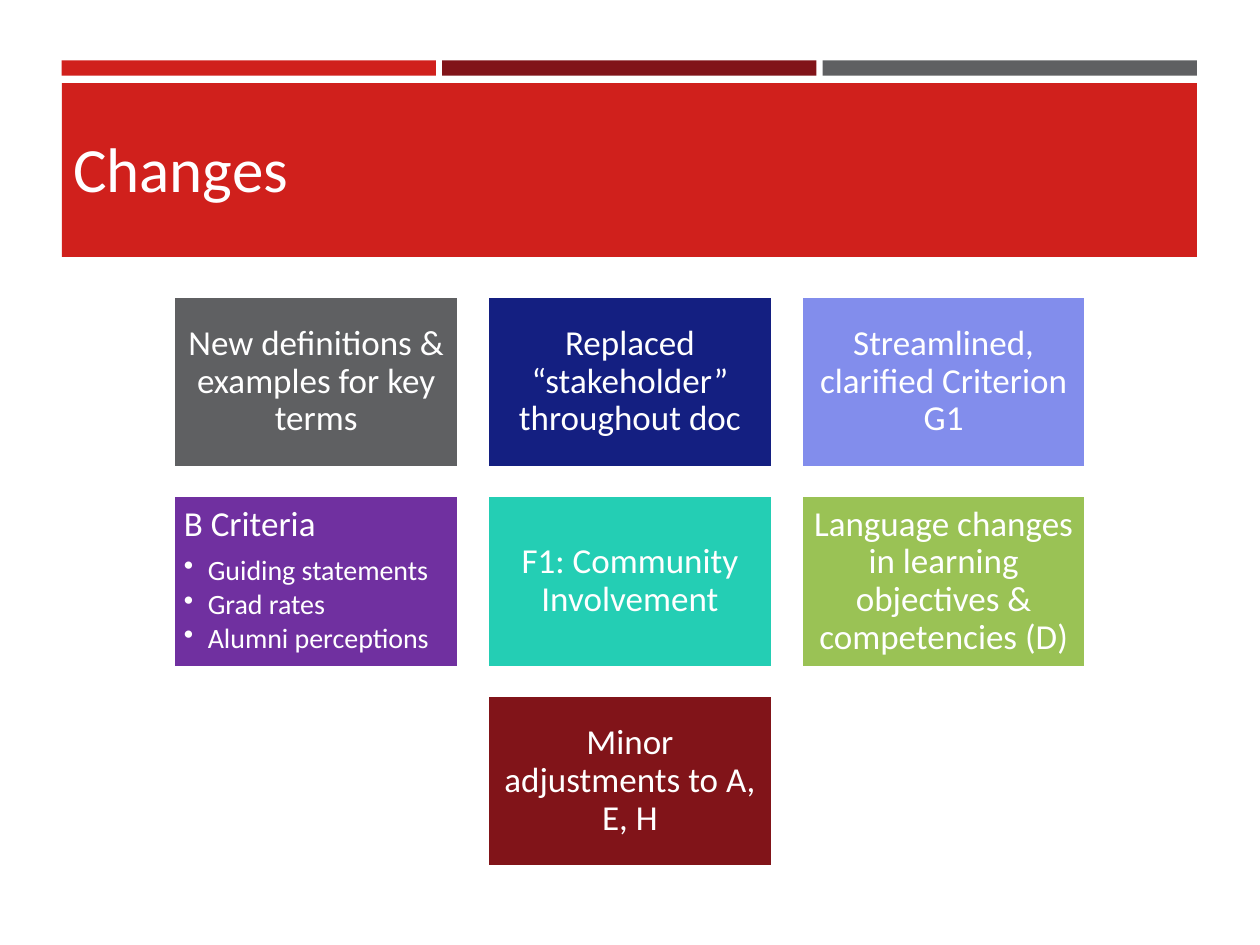
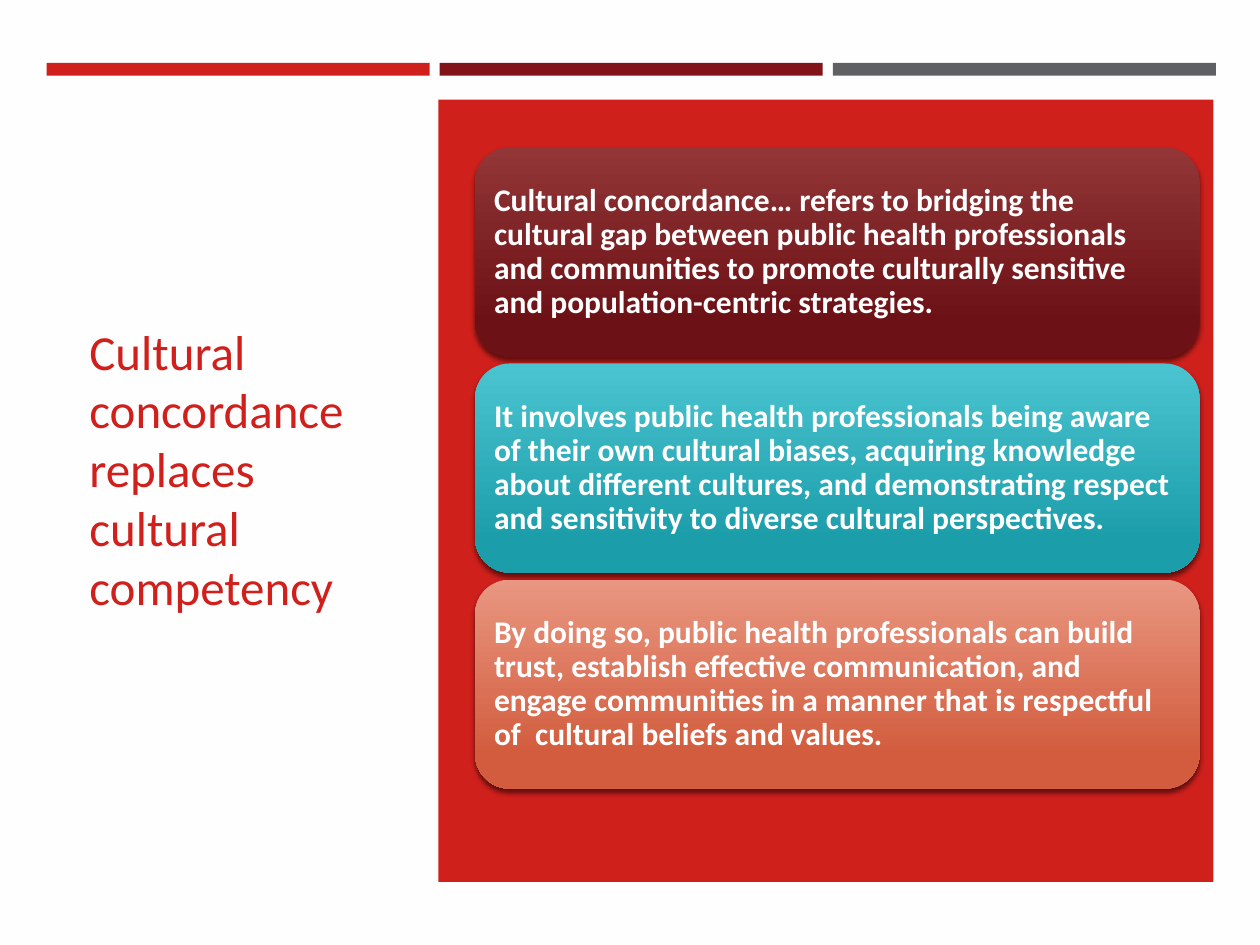
from lxml.etree import SubElement
from pptx import Presentation
from pptx.dml.color import RGBColor
from pptx.enum.shapes import MSO_SHAPE
from pptx.enum.text import MSO_ANCHOR, MSO_AUTO_SIZE, PP_ALIGN
from pptx.oxml import parse_xml
from pptx.oxml.ns import nsdecls, qn
from pptx.util import Inches, Pt

RED = RGBColor(0xD0, 0x20, 0x1C)
WINE = RGBColor(0x81, 0x14, 0x19)
GRAY = RGBColor(0x5F, 0x60, 0x62)
NAVY = RGBColor(0x14, 0x1F, 0x81)
LILAC = RGBColor(0x82, 0x8D, 0xEC)
PURPLE = RGBColor(0x70, 0x30, 0xA0)
TEAL = RGBColor(0x24, 0xCE, 0xB4)
GREEN = RGBColor(0x9A, 0xC2, 0x55)
WHITE = RGBColor(0xFF, 0xFF, 0xFF)
PAPER = RGBColor(0xFF, 0xFE, 0xFF)
WINES = RGBColor(0x92, 0x36, 0x38), RGBColor(0x6C, 0x11, 0x15)
AQUAS = RGBColor(0x4B, 0xC4, 0xD1), RGBColor(0x1C, 0x9E, 0xAA)
CORALS = RGBColor(0xE9, 0x97, 0x82), RGBColor(0xD2, 0x5C, 0x3D)
FONT = "Calibri"
SHADOW = (
    f'<a:effectLst {nsdecls("a")}><a:outerShdw blurRad="38100" dist="25400" '
    'dir="5400000" rotWithShape="0"><a:srgbClr val="000000">'
    '<a:alpha val="55000"/></a:srgbClr></a:outerShdw></a:effectLst>'
)


def draw(slide, area, fill=None, kind=MSO_SHAPE.RECTANGLE):
    shape = slide.shapes.add_shape(kind, *map(Inches, area))
    shape.shadow.inherit = False
    shape.line.fill.background()
    if fill is not None:
        shape.fill.solid()
        shape.fill.fore_color.rgb = fill
    return shape


def write(shape, text, size=20, color=WHITE, bold=False, align=PP_ALIGN.LEFT,
          anchor=MSO_ANCHOR.MIDDLE, inset=0.08, space=0.9, after=0, bullet=False):
    frame = shape.text_frame
    frame.word_wrap = True
    frame.auto_size = MSO_AUTO_SIZE.NONE
    frame.vertical_anchor = anchor
    frame.margin_left = frame.margin_right = Inches(inset)
    frame.margin_top = frame.margin_bottom = Inches(inset)
    para = frame.add_paragraph() if frame.text else frame.paragraphs[0]
    para.alignment = align
    para.line_spacing = space
    para.space_before = Pt(0)
    para.space_after = Pt(after)
    if bullet:
        para.level = 1
        props = para._p.get_or_add_pPr()
        props.set("marL", str(Inches(0.19)))
        props.set("indent", str(-Inches(0.19)))
        SubElement(props, qn("a:buChar")).set("char", "•")
    run = para.add_run()
    run.text = text
    run.font.name = FONT
    run.font.size = Pt(size)
    run.font.bold = bold
    run.font.color.rgb = color


deck = Presentation()
deck.slide_width, deck.slide_height = Inches(10), Inches(7.5)

heads = [
    ("Changes", 36, PAPER, WHITE, (0.48, 0.77, 9.05, 1.11),
     (0.49, 0.66, 9.01, 1.38), (0.49, 0.48, 2.97, 0.12), 3.02),
    ("Cultural concordance replaces cultural competency", 28, RED, PAPER,
     (0.61, 1.14, 2.5, 5.15), (3.48, 0.79, 6.15, 6.21), (0.37, 0.5, 3.04, 0.1), 3.12),
]
slides = []
for text, size, color, back, area, panel, band, step in heads:
    slide = deck.slides.add_slide(deck.slide_layouts[5])
    slide.background.fill.solid()
    slide.background.fill.fore_color.rgb = back
    left, top, width, height = band
    for col, fill in enumerate((RED, WINE, GRAY)):
        draw(slide, (left + col * step, top, width, height), fill)
    draw(slide, panel, RED)
    title = slide.shapes.title
    title.left, title.top, title.width, title.height = map(Inches, area)
    write(title, text, size=size, color=color, inset=0.1, space=1)
    title.element.getparent().append(title.element)
    slides.append(slide)

first, last = slides

tiles = [
    (0, 0, GRAY, "New definitions & examples for key terms"),
    (1, 0, NAVY, "Replaced “stakeholder” throughout doc"),
    (2, 0, LILAC, "Streamlined, clarified Criterion G1"),
    (0, 1, PURPLE, "B Criteria"),
    (1, 1, TEAL, "F1: Community Involvement"),
    (2, 1, GREEN, "Language changes in learning objectives & competencies (D)"),
    (1, 2, WINE, "Minor adjustments to A, E, H"),
]
points = {"B Criteria": ["Guiding statements", "Grad rates", "Alumni perceptions"]}
for col, row, fill, text in tiles:
    tile = draw(first, (1.38 + col * 2.49, 2.35 + row * 1.585, 2.26, 1.36), fill)
    tile.line.color.rgb = WHITE
    tile.line.width = Pt(1.75)
    if text in points:
        write(tile, text, anchor=MSO_ANCHOR.TOP, after=7)
        for point in points[text]:
            write(tile, point, size=16, anchor=MSO_ANCHOR.TOP, after=2.4, bullet=True)
    else:
        write(tile, text, align=PP_ALIGN.CENTER)

cards = [
    (WINES, "Cultural concordance… refers to bridging the cultural gap between "
     "public health professionals and communities to promote culturally "
     "sensitive and population-centric strategies."),
    (AQUAS, "It involves public health professionals being aware of their own "
     "cultural biases, acquiring knowledge about different cultures, and "
     "demonstrating respect and sensitivity to diverse cultural perspectives."),
    (CORALS, "By doing so, public health professionals can build trust, establish "
     "effective communication, and engage communities in a manner that is "
     "respectful of  cultural beliefs and values."),
]
for row, (shades, text) in enumerate(cards):
    area = 3.77, 1.17 + row * 1.715, 5.75, 1.66
    card = draw(last, area, kind=MSO_SHAPE.ROUNDED_RECTANGLE)
    card.fill.gradient()
    card.fill.gradient_angle = 270
    for stop, place, shade in zip(card.fill.gradient_stops, (0, 0.84), shades):
        stop.position = place
        stop.color.rgb = shade
    props = card.element.spPr
    props.replace(props.find(qn("a:effectLst")), parse_xml(SHADOW))
    write(card, text, size=18, bold=True, inset=0.07)

deck.save("out.pptx")
